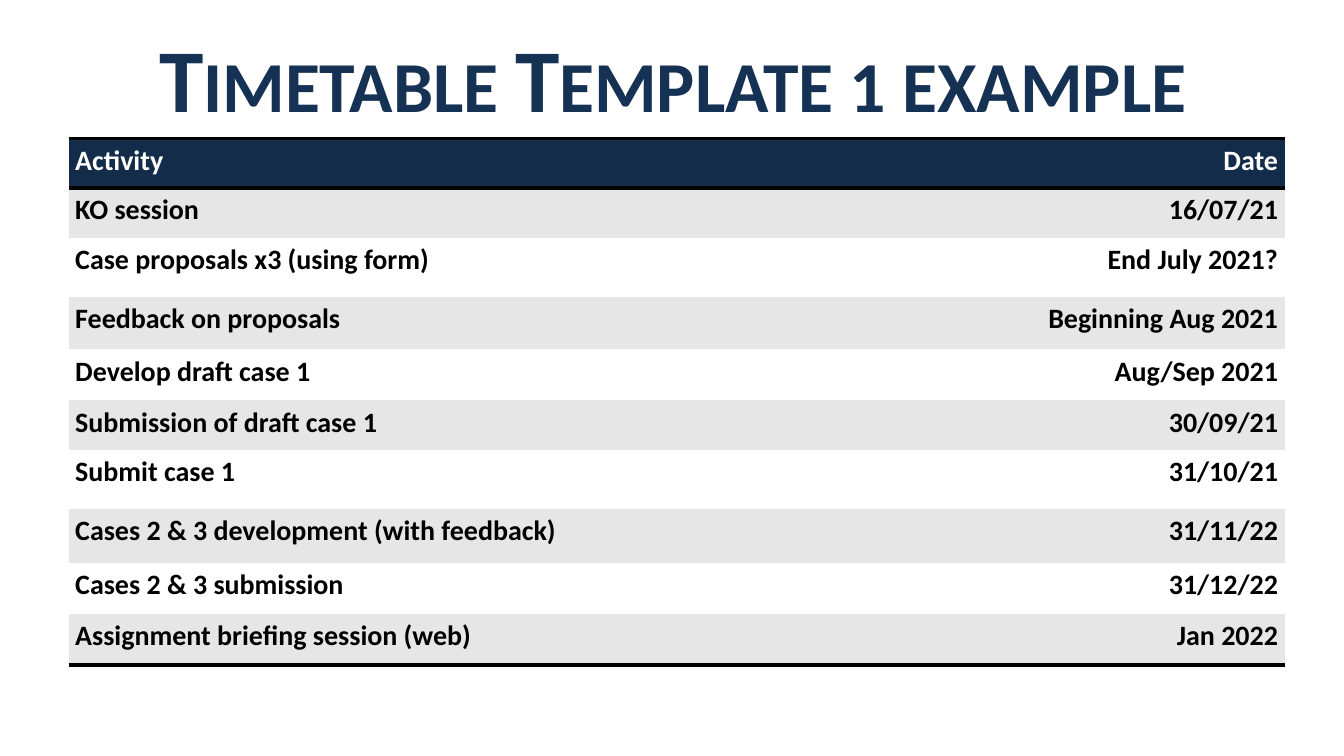
from lxml import etree
from pptx import Presentation, util as u
from pptx.dml.color import RGBColor
from pptx.enum import text
from pptx.oxml.ns import qn

NAVY, TITLE_NAVY, GREY, WHITE, BLACK = "122C4A", "153154", "E6E6E6", "FFFFFF", "000000"
NO_GRID_STYLE = "{2D5ABB26-0587-4C30-8999-92F81FD0307C}"
SLIDE_WIDTH = u.Inches(10)
SLIDE_HEIGHT = SLIDE_WIDTH * 9 // 16
LEFT = 0.51
COLUMN_WIDTHS = (5.92, 3.13)
ALIGNMENTS = (text.PP_ALIGN.LEFT, text.PP_ALIGN.RIGHT)
CELL_FORMAT = {
    "margin_left": u.Inches(0.05),
    "margin_right": u.Inches(0.05),
    "margin_top": 0,
    "margin_bottom": 0,
}
TIMETABLE = (
    (0.37, "Activity", "Date"),
    (0.37, "KO session", "16/07/21"),
    (0.44, "Case proposals x3 (using form)", "End July 2021?"),
    (0.39, "Feedback on proposals", "Beginning Aug 2021"),
    (0.38, "Develop draft case 1", "Aug/Sep 2021"),
    (0.37, "Submission of draft case 1", "30/09/21"),
    (0.44, "Submit case 1", "31/10/21"),
    (0.4, "Cases 2 & 3 development (with feedback)", "31/11/22"),
    (0.38, "Cases 2 & 3 submission", "31/12/22"),
    (0.38, "Assignment briefing session (web)", "Jan 2022"),
)


def set_values(target, values):
    for name, value in values.items():
        setattr(target, name, value)


def set_color(color_format, hex_value):
    color_format.rgb = RGBColor.from_string(hex_value)


def write_run(paragraph, words, size, color):
    run = paragraph.add_run()
    run.text = words
    set_values(run.font, {"name": "Calibri", "size": u.Pt(size), "bold": True})
    set_color(run.font.color, color)
    return run


def add_title(slide, words):
    title = slide.shapes.add_textbox(*map(u.Inches, (LEFT, 0.1, 8.99, 0.94)))
    frame = title.text_frame
    set_values(frame, {"word_wrap": True, "vertical_anchor": text.MSO_ANCHOR.MIDDLE})
    heading = frame.paragraphs[0]
    heading.alignment = text.PP_ALIGN.CENTER
    run = write_run(heading, words, 48, TITLE_NAVY)
    run._r.get_or_add_rPr().set("cap", "small")


def add_rule(cell, side):
    properties = cell._tc.get_or_add_tcPr()
    rule = etree.SubElement(properties, qn(f"a:ln{side}"), w=str(u.Pt(2)))
    fill = etree.SubElement(rule, qn("a:solidFill"))
    etree.SubElement(fill, qn("a:srgbClr"), val=BLACK)


def format_cell(cell, words, alignment, fill, color, rules):
    set_values(cell, CELL_FORMAT)
    for side in rules:
        add_rule(cell, side)
    cell.fill.solid()
    set_color(cell.fill.fore_color, fill)
    entry = cell.text_frame.paragraphs[0]
    set_values(entry, {"alignment": alignment, "line_spacing": 1.15})
    write_run(entry, words, 15, color)


def row_look(index):
    if index == 0:
        return NAVY, WHITE, "TB"
    rules = "B" if index == len(TIMETABLE) - 1 else ""
    return (GREY if index % 2 else WHITE), BLACK, rules


def add_timetable(slide):
    size = sum(COLUMN_WIDTHS), sum(row[0] for row in TIMETABLE)
    timetable = slide.shapes.add_table(
        len(TIMETABLE), len(COLUMN_WIDTHS), *map(u.Inches, (LEFT, 1.03, *size))
    ).table
    timetable._tbl.tblPr.find(qn("a:tableStyleId")).text = NO_GRID_STYLE
    for column, width in zip(timetable.columns, COLUMN_WIDTHS):
        column.width = u.Inches(width)
    for index, (height, *entries) in enumerate(TIMETABLE):
        row = timetable.rows[index]
        row.height = u.Inches(height)
        for cell, words, alignment in zip(row.cells, entries, ALIGNMENTS):
            format_cell(cell, words, alignment, *row_look(index))


def main():
    deck = Presentation()
    set_values(deck, {"slide_width": SLIDE_WIDTH, "slide_height": SLIDE_HEIGHT})
    slide = deck.slides.add_slide(deck.slide_layouts[6])
    add_title(slide, "Timetable Template 1 example")
    add_timetable(slide)
    deck.save("out.pptx")


if __name__ == "__main__":
    main()
